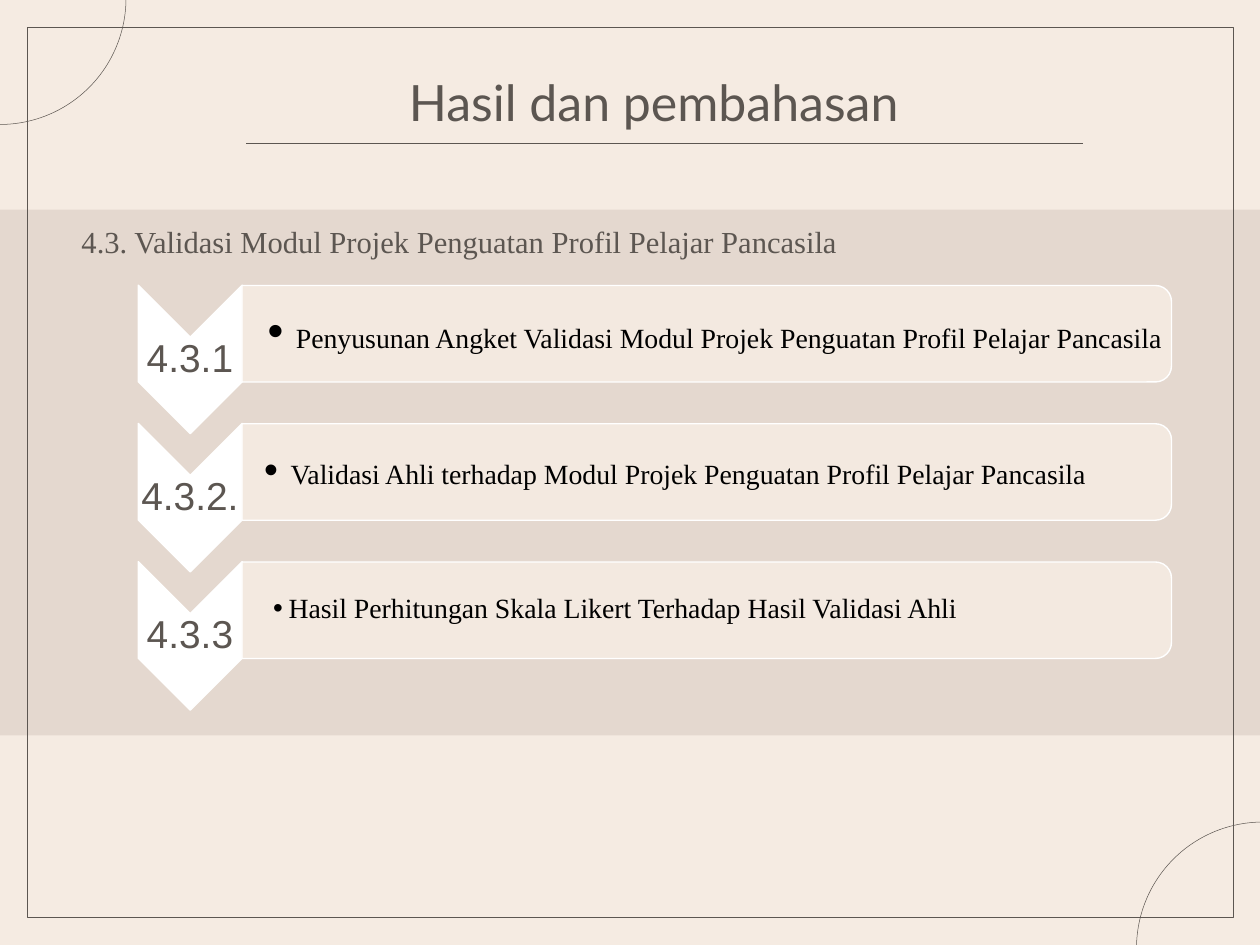
from pptx import Presentation
from pptx.dml.color import RGBColor
from pptx.enum.shapes import MSO_CONNECTOR, MSO_SHAPE
from pptx.enum.text import MSO_ANCHOR, PP_ALIGN
from pptx.oxml import parse_xml
from pptx.oxml.ns import nsdecls, qn
from pptx.util import Inches, Pt
from lxml.etree import SubElement

CREAM, SAND, BROWN, WHITE, BLACK = "F5EBE2", "E4D8CF", "5C5651", "FFFFFF", "000000"
SERIF, SANS, TITLE_FONT = "Times New Roman", "Arial", "Lato"


def color(value):
    return RGBColor.from_string(value)


class SlideBuilder:
    def __init__(self, page):
        self.page = page
        page.background.fill.solid()
        page.background.fill.fore_color.rgb = color(CREAM)

    def stroke(self, line, value, width):
        line.color.rgb = color(value)
        line.width = Pt(width)

    def shape(self, kind, frame, fill=None, line=None, width=0.75,
              rotation=0, adjustments=(), opacity=None):
        shape = self.page.shapes.add_shape(kind, *map(Inches, frame))
        shape.shadow.inherit = False
        shape.rotation = rotation
        for index, value in enumerate(adjustments):
            shape.adjustments[index] = value
        if fill:
            shape.fill.solid()
            shape.fill.fore_color.rgb = color(fill)
        else:
            shape.fill.background()
        if line:
            self.stroke(shape.line, line, width)
        else:
            shape.line.fill.background()
        if opacity:
            paint = shape.fill._xPr.find(qn("a:solidFill"))[0]
            SubElement(paint, qn("a:alpha"), val=str(opacity * 1000))

    def rule(self, left, right, y):
        line = self.page.shapes.add_connector(
            MSO_CONNECTOR.STRAIGHT, *map(Inches, (left, y, right, y)))
        self.stroke(line.line, BROWN, 0.75)
        SubElement(line._element.spPr, qn("a:effectLst"))

    def text(self, frame, spans, ink=BROWN, insets=(0.04,) * 4, spacing=1.0,
             align=PP_ALIGN.LEFT, anchor=MSO_ANCHOR.MIDDLE, bullet_margin=None):
        """Add one paragraph; spans are (text, size, font), insets left, top, right, bottom."""
        box = self.page.shapes.add_textbox(*map(Inches, frame))
        left, top, right, bottom = map(Inches, insets)
        layout = {"word_wrap": True, "vertical_anchor": anchor, "margin_left": left,
                  "margin_top": top, "margin_right": right, "margin_bottom": bottom}
        for name, value in layout.items():
            setattr(box.text_frame, name, value)
        para = box.text_frame.paragraphs[0]
        para.alignment = align
        para.line_spacing = spacing
        if bullet_margin:
            self.bullet(para, bullet_margin)
        for words, size, font in spans:
            span = para.add_run()
            span.text = words
            for name, value in {"size": Pt(size), "name": font}.items():
                setattr(span.font, name, value)
            span.font.color.rgb = color(ink)

    def bullet(self, para, margin):
        properties = para._p.get_or_add_pPr()
        properties.set("marL", str(Inches(margin)))
        properties.set("indent", str(Inches(-0.31)))
        for markup in (f'<a:buClr {nsdecls("a")}><a:srgbClr val="{BLACK}"/></a:buClr>',
                       f'<a:buFont {nsdecls("a")} typeface="{SANS}"/>',
                       f'<a:buChar {nsdecls("a")} char="•"/>'):
            properties.append(parse_xml(markup))


def main():
    deck = Presentation()
    deck.slide_width, deck.slide_height = Inches(25.2), Inches(18.9)
    slide = SlideBuilder(deck.slides.add_slide(deck.slide_layouts[6]))

    slide.shape(MSO_SHAPE.RECTANGLE, (0, 4.19, 25.2, 10.52), fill=SAND)
    for left, top, rotation in ((-2.53, -2.56, 0), (22.73, 16.44, 180)):
        slide.shape(MSO_SHAPE.PIE, (left, top, 5.05, 5.05), line=BROWN,
                    rotation=rotation, adjustments=(0, 54.279))
    slide.shape(MSO_SHAPE.RECTANGLE, (0.54, 0.55, 24.12, 17.8), line=BROWN)

    slide.text((1.35, 4.45, 21.25, 1.25),
               [("4.3. Validasi Modul Projek Penguatan Profil Pelajar Pancasila", 44, SERIF)],
               insets=(0.28, 0, 0.28, 0), align=PP_ALIGN.JUSTIFY, anchor=MSO_ANCHOR.TOP)
    slide.rule(4.93, 21.65, 2.87)
    slide.text((4.93, 1.21, 16.29, 1.67), [("Hasil dan pembahasan", 72, TITLE_FONT)],
               insets=(0.28,) * 4, spacing=0.7, align=PP_ALIGN.CENTER,
               anchor=MSO_ANCHOR.BOTTOM)

    # label, wording, size of the leading space (sets the bullet size), inset, bullet margin
    sections = (
        ("4.3.1", "Penyusunan Angket Validasi Modul Projek Penguatan Profil Pelajar Pancasila",
         65, 0.51, 0.31),
        ("4.3.2.", "Validasi Ahli terhadap Modul Projek Penguatan Profil Pelajar Pancasila",
         57, 0.44, 0.31),
        ("4.3.3", "Hasil Perhitungan Skala Likert Terhadap Hasil Validasi Ahli",
         None, 0.31, 0.62),
    )
    row_step = 2.765
    for row, (label, wording, lead_size, inset, margin) in enumerate(sections):
        offset = row * row_step
        slide.shape(MSO_SHAPE.CHEVRON, (2.32, 6.15 + offset, 2.97, 2.08),
                    fill=WHITE, line=WHITE, width=2, rotation=90)
        slide.text((2.76, 6.75 + offset, 2.08, 0.89), [(label, 56, SANS)],
                   spacing=0.9, align=PP_ALIGN.CENTER)
        slide.shape(MSO_SHAPE.ROUND_2_SAME_RECTANGLE, (13.17, -2.62 + offset, 1.93, 18.59),
                    fill=CREAM, line=WHITE, width=2, rotation=90, opacity=90)
        lead = [(" ", lead_size, SANS)] if lead_size else []
        slide.text((4.84, 5.8 + offset, 18.49, 1.74), lead + [(wording, 40, SERIF)],
                   ink=BLACK, insets=(inset, 0.04, 0.04, 0.04), spacing=0.9,
                   bullet_margin=margin)

    deck.save("out.pptx")


if __name__ == "__main__":
    main()
